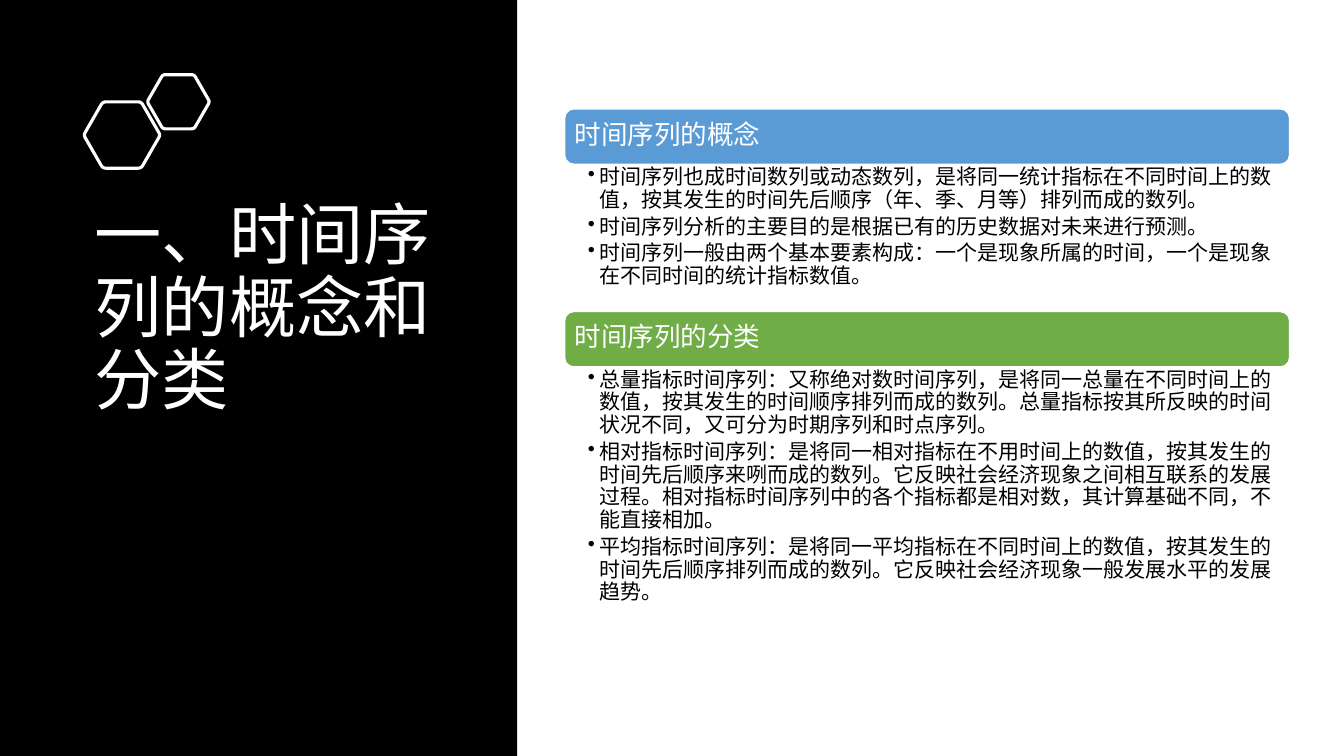
from math import cos, pi, sin

from lxml import etree
from pptx import Presentation
from pptx.dml.color import RGBColor
from pptx.enum.shapes import MSO_SHAPE
from pptx.enum.text import MSO_ANCHOR
from pptx.oxml.ns import qn
from pptx.util import Pt

RECT = MSO_SHAPE.RECTANGLE
ROUND = MSO_SHAPE.ROUNDED_RECTANGLE
TOP = MSO_ANCHOR.TOP
MIDDLE = MSO_ANCHOR.MIDDLE

PX = 9144  # 100 px to the inch
FONT = "Noto Sans CJK SC"
COLORS = {
    "black": "000000",
    "white": "FFFFFF",
    "blue": "5B9BD5",
    "green": "70AD47",
}

# Header top, body height, color, header, points
TOPICS = [
    (108, 146, "blue", "时间序列的概念", [
        "时间序列也成时间数列或动态数列，是将同一统计指标在不同时间上的数值，按其发生的时间先后顺序（年、季、月等）排列而成的数列。",
        "时间序列分析的主要目的是根据已有的历史数据对未来进行预测。",
        "时间序列一般由两个基本要素构成：一个是现象所属的时间，一个是现象在不同时间的统计指标数值。",
    ]),
    (309, 275, "green", "时间序列的分类", [
        "总量指标时间序列：又称绝对数时间序列，是将同一总量在不同时间上的数值，按其发生的时间顺序排列而成的数列。总量指标按其所反映的时间状况不同，又可分为时期序列和时点序列。",
        "相对指标时间序列：是将同一相对指标在不用时间上的数值，按其发生的时间先后顺序来咧而成的数列。它反映社会经济现象之间相互联系的发展过程。相对指标时间序列中的各个指标都是相对数，其计算基础不同，不能直接相加。",
        "平均指标时间序列：是将同一平均指标在不同时间上的数值，按其发生的时间先后顺序排列而成的数列。它反映社会经济现象一般发展水平的发展趋势。",
    ]),
]


def px(*values):
    return [round(value * PX) for value in values]


def color(name):
    return RGBColor.from_string(COLORS[name])


class Board:
    """Holds the style and the current slide."""

    def __init__(self, deck):
        self.slide = deck.slides.add_slide(deck.slide_layouts[6])
        self.shapes = self.slide.shapes

    def box(self, kind, x, y, w, h, fill, line=None):
        shape = self.shapes.add_shape(kind, *px(x, y, w, h))
        shape.shadow.inherit = False
        shape.fill.solid()
        shape.fill.fore_color.rgb = color(fill)
        if line:
            shape.line.color.rgb = color(line)
            shape.line.width = Pt(1)
        else:
            shape.line.fill.background()

    def hexagon(self, x, y, radius):
        """Draw an outlined hexagon with rounded corners around a center."""
        tips = [(x + radius * cos(i * pi / 3), y + radius * sin(i * pi / 3))
                for i in range(6)]
        cut, dots = 0.08, []
        for i, tip in enumerate(tips):
            before, after = tips[i - 1], tips[(i + 1) % 6]
            for t in (0, 0.25, 0.5, 0.75, 1):
                back, on = cut * (1 - t) ** 2, cut * t ** 2
                dots.append(px(*(c + back * (b - c) + on * (a - c)
                                 for b, c, a in zip(before, tip, after))))
        pen = self.shapes.build_freeform(*dots[0], scale=1.0)
        pen.add_line_segments(dots[1:], close=True)
        shape = pen.convert_to_shape()
        shape.shadow.inherit = False
        shape.fill.background()
        shape.line.color.rgb = color("white")
        shape.line.width = Pt(2.25)

    def text(self, x, y, w, h, lines, size, ink, pad, anchor=TOP,
             after=0, bullet=False):
        frame = self.shapes.add_textbox(*px(x, y, w, h)).text_frame
        frame.word_wrap = True
        frame.vertical_anchor = anchor
        (frame.margin_left, frame.margin_top,
         frame.margin_right, frame.margin_bottom) = px(*pad)
        for i, line in enumerate(lines):
            para = frame.paragraphs[0] if i == 0 else frame.add_paragraph()
            para.text = line
            para.line_spacing = 0.9
            para.space_after = Pt(after)
            para.font.size = Pt(size)
            para.font.color.rgb = color(ink)
            para.font.name = FONT
            self.finish(para, bullet)

    def finish(self, para, bullet):
        """Set the East Asian font and, if wanted, the bullet."""
        props = para._p.pPr
        style = props.find(qn("a:defRPr"))
        etree.SubElement(style, qn("a:ea"), typeface=FONT)
        if bullet:
            props.set("lvl", "1")
            props.set("marL", str(12 * PX))
            props.set("indent", str(-12 * PX))
            mark = etree.Element(qn("a:buChar"), char="•")
            style.addprevious(mark)

    def topic(self, y, depth, fill, head, points):
        """Draw a header bar with its bulleted points below."""
        self.box(ROUND, 560, y, 719, 55, fill, "white")
        self.text(562, y + 2, 714, 49, [head], 19, "white",
                  (8, 8, 8, 8), MIDDLE)
        self.text(560, y + 54, 719, depth, points, 15, "black",
                  (23, 3, 15, 3), after=3, bullet=True)


def main():
    deck = Presentation()
    deck.slide_width, deck.slide_height = px(1333, 750)
    board = Board(deck)
    board.box(RECT, 0, 0, 513, 750, "black")
    board.text(84, 195, 392, 350, ["一、时间序列的概念和分类"], 48, "white",
               (10, 5, 10, 5))
    board.hexagon(121, 134, 38)
    board.hexagon(177, 101, 31)
    for topic in TOPICS:
        board.topic(*topic)
    deck.save("out.pptx")


if __name__ == "__main__":
    main()
